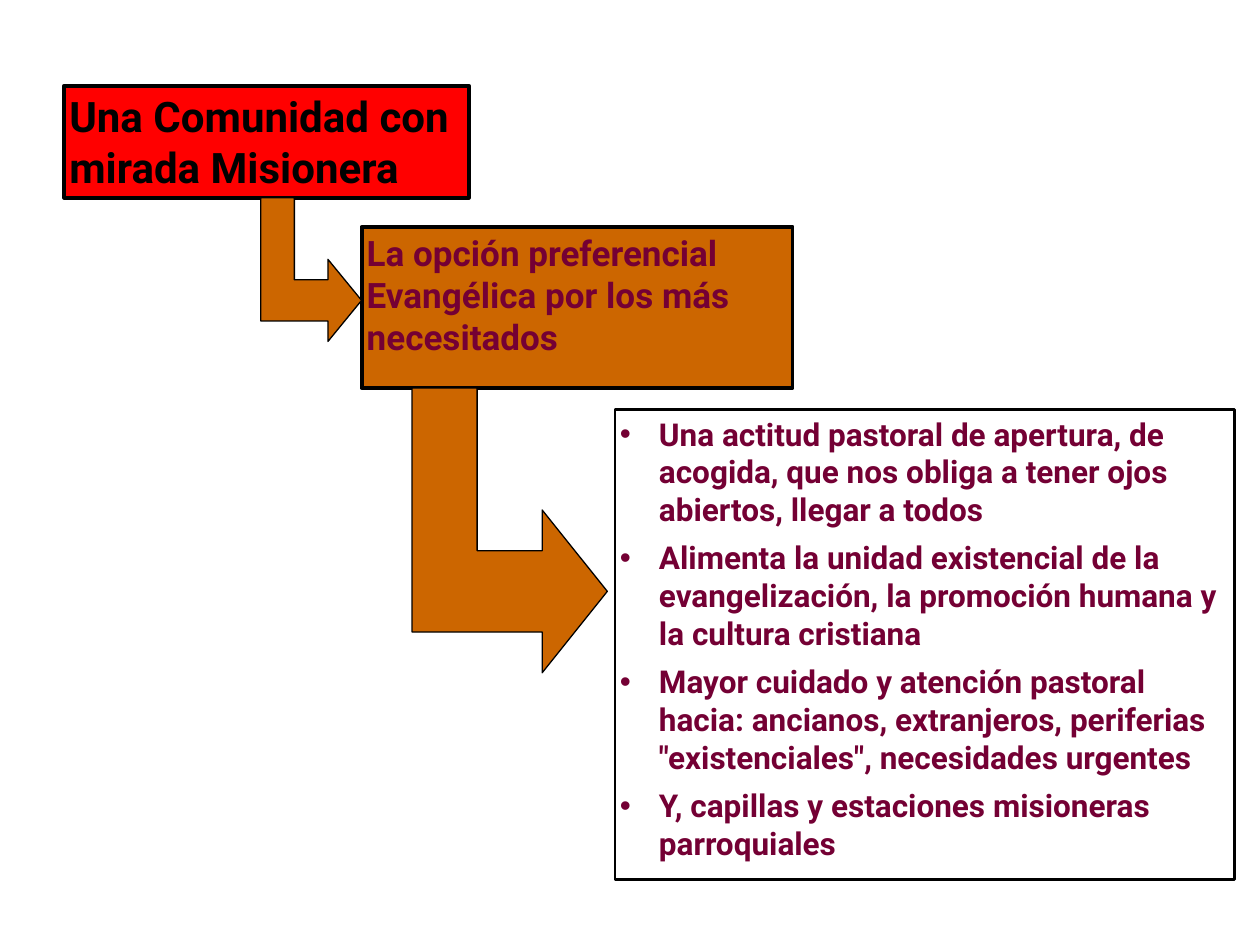
from pptx import Presentation
from pptx.dml.color import RGBColor
from pptx.enum.shapes import MSO_SHAPE
from pptx.enum.text import MSO_ANCHOR, MSO_AUTO_SIZE, PP_ALIGN
from pptx.util import Inches, Pt

FONT = "Roboto"
BLACK, RED, ORANGE, PLUM = "000000", "FF0000", "CC6600", "740034"

COMMUNITY = ["Una Comunidad con mirada Misionera"]
OPTION = ["La opción preferencial", "Evangélica por los más", "necesitados"]
ATTITUDES = [
    "Una actitud pastoral de apertura, de acogida, que nos obliga a tener ojos "
    "abiertos, llegar a todos",
    "Alimenta la unidad existencial de la evangelización, la promoción humana y "
    "la cultura cristiana",
    "Mayor cuidado y atención pastoral hacia: ancianos, extranjeros, periferias "
    '"existenciales", necesidades urgentes',
    "Y, capillas y estaciones misioneras parroquiales",
]
# left, top, width, height
COMMUNITY_BOX = (0.51, 0.68, 3.21, 0.89)
OPTION_BOX = (2.87, 1.8, 3.42, 1.28)
ATTITUDES_BOX = (4.88, 3.25, 4.92, 3.73)
ARROWS = [(2.07, 1.57, 0.8, 1.14), (3.27, 3.08, 1.55, 2.26)]


def rgb(value):
    return RGBColor.from_string(value)


def paint(shape, fill, line_width):
    if fill:
        shape.fill.solid()
        shape.fill.fore_color.rgb = rgb(fill)
    else:
        shape.fill.background()
    shape.line.color.rgb = rgb(BLACK)
    shape.line.width = Pt(line_width)


def fill_box(shape, box, lines, size, color, fill, line_width, space_after=0):
    shape.left, shape.top, shape.width, shape.height = map(Inches, box)
    paint(shape, fill, line_width)
    frame = shape.text_frame
    frame_format = {"word_wrap": True, "auto_size": MSO_AUTO_SIZE.NONE,
                    "vertical_anchor": MSO_ANCHOR.TOP}
    frame_format.update({f"margin_{side}": Inches(0.04)
                         for side in ("left", "top", "right", "bottom")})
    for name, value in frame_format.items():
        setattr(frame, name, value)
    frame.text = "\n".join(lines)
    for paragraph in frame.paragraphs:
        paragraph.alignment = PP_ALIGN.LEFT
        paragraph.space_before = Pt(0)
        paragraph.space_after = Pt(space_after)
        font = paragraph.runs[0].font
        for name, value in {"name": FONT, "size": Pt(size), "bold": True}.items():
            setattr(font, name, value)
        font.color.rgb = rgb(color)


def add_bent_arrow(shapes, left, top, width, height):
    """Draw an arrow that goes down, then turns right to its tip."""
    third = width / 3
    bottom, right = top + height, left + width
    head = height * 4 / 7
    head_top, quarter = bottom - head, head / 4
    neck = right - third
    points = [
        (right, bottom - head / 2), (neck, head_top), (neck, head_top + quarter),
        (left + third, head_top + quarter), (left + third, top), (left, top),
        (left, bottom - quarter), (neck, bottom - quarter), (neck, bottom),
    ]
    points = [(Inches(x), Inches(y)) for x, y in points]
    builder = shapes.build_freeform(*points[0])
    builder.add_line_segments(points[1:], close=True)
    arrow = builder.convert_to_shape()
    arrow.shadow.inherit = False
    paint(arrow, ORANGE, 0.75)


prs = Presentation()
prs.slide_width, prs.slide_height = Inches(10), Inches(7.5)
slide = prs.slides.add_slide(prs.slide_layouts[1])
shapes = slide.shapes

fill_box(shapes.title, COMMUNITY_BOX, COMMUNITY, 24, BLACK, RED, 2.25)

option = shapes.add_shape(MSO_SHAPE.RECTANGLE, *map(Inches, OPTION_BOX))
option.shadow.inherit = False
fill_box(option, OPTION_BOX, OPTION, 20, PLUM, ORANGE, 2.25)

attitudes = slide.placeholders[1]
fill_box(attitudes, ATTITUDES_BOX, ATTITUDES, 18, PLUM, None, 1.5, space_after=6)
for paragraph in attitudes.text_frame.paragraphs:
    properties = paragraph._p.get_or_add_pPr()
    properties.set("marL", str(Inches(0.31)))
    properties.set("indent", str(-Inches(0.31)))

for arrow_box in ARROWS:
    add_bent_arrow(shapes, *arrow_box)

prs.save("out.pptx")
